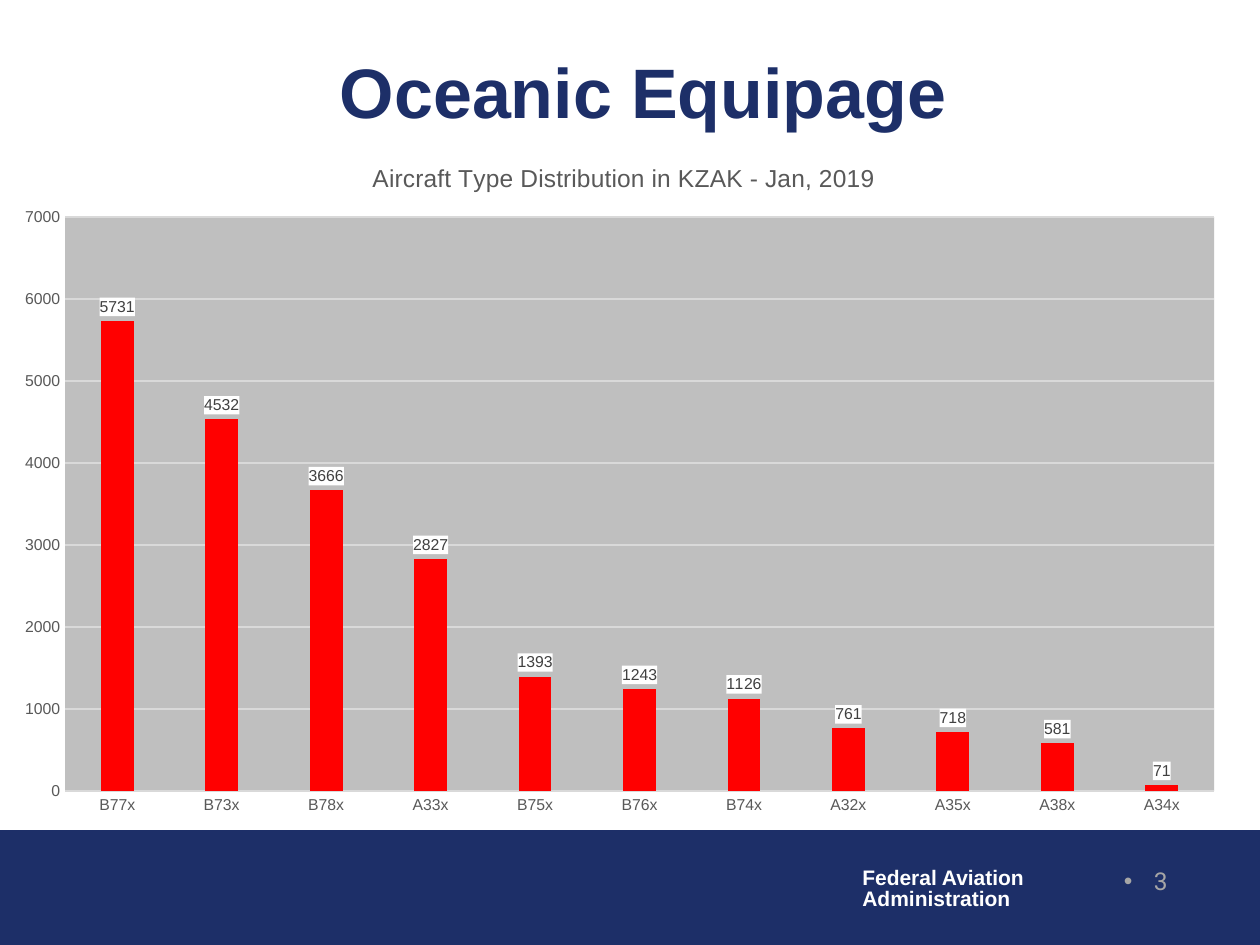
from dataclasses import dataclass

from pptx import Presentation
from pptx.chart.data import CategoryChartData
from pptx.dml.color import RGBColor
from pptx.enum import chart as ch, shapes, text
from pptx.oxml import parse_xml
from pptx.oxml.ns import nsdecls
from pptx.util import Emu, Pt


@dataclass(frozen=True)
class Theme:
    """Colours, fonts and type sizes."""
    navy: str = "1D2F68"
    white: str = "FFFFFF"
    red: str = "FF0000"
    plot: str = "BFBFBF"
    grid: str = "D9D9D9"
    grey: str = "595959"
    dark: str = "404040"
    pale: str = "A6A6A6"
    sans: str = "Arial"
    digit: str = "Roboto"
    head: int = 40
    sub: int = 14
    foot: int = 12
    tick: int = 9


T = Theme()
COUNTS = {
    "B77x": 5731, "B73x": 4532, "B78x": 3666, "A33x": 2827,
    "B75x": 1393, "B76x": 1243, "B74x": 1126, "A32x": 761,
    "A35x": 718, "A38x": 581, "A34x": 71,
}


def px(*nums):
    """Turn pixels into EMU lengths."""
    return [Emu(round(n * 914400 / 126)) for n in nums]


def rgb(hue):
    """Turn a hex string into a colour."""
    return RGBColor.from_string(hue)


def style(font, size, hue, bold=False, name=T.sans):
    """Set the look of a font."""
    font.name, font.size, font.bold = name, Pt(size), bold
    font.color.rgb = rgb(hue)


def write(para, words, *look, **more):
    """Add one styled run to a paragraph."""
    run = para.add_run()
    run.text = words
    style(run.font, *look, **more)


def rule(line, hue):
    """Draw a thin line in one colour."""
    line.color.rgb = rgb(hue)
    line.width = Pt(0.75)


def paint(hue):
    """Make a chart part's solid fill."""
    return parse_xml(
        f'<c:spPr {nsdecls("c", "a")}><a:solidFill><a:srgbClr val="{hue}"/>'
        '</a:solidFill><a:ln><a:noFill/></a:ln></c:spPr>')


def place(part, index, inner=False, **spots):
    """Pin a chart part at fractions of the chart."""
    for old in part.findall("{*}layout"):
        part.remove(old)
    modes = '<c:xMode val="edge"/><c:yMode val="edge"/>'
    target = '<c:layoutTarget val="inner"/>' if inner else ""
    vals = "".join(f'<c:{k} val="{v:.4f}"/>' for k, v in spots.items())
    part.insert(index, parse_xml(
        f'<c:layout {nsdecls("c")}><c:manualLayout>{target}{modes}{vals}'
        '</c:manualLayout></c:layout>'))


def add_title(slide, x, y, w, h):
    """Place and write the slide title."""
    box = slide.shapes.title
    box.left, box.top, box.width, box.height = px(x, y, w, h)
    frame = box.text_frame
    frame.vertical_anchor = text.MSO_ANCHOR.MIDDLE
    para = frame.paragraphs[0]
    para.alignment = text.PP_ALIGN.CENTER
    write(para, "Oceanic Equipage", T.head, T.navy, bold=True)


def add_bars(slide, x, y, w, h):
    """Add the column chart of aircraft types."""
    data = CategoryChartData()
    data.categories = list(COUNTS)
    data.add_series("Series 1", list(COUNTS.values()))
    chart = slide.shapes.add_chart(
        ch.XL_CHART_TYPE.COLUMN_CLUSTERED, *px(x, y, w, h), data).chart
    style(chart.font, 10, "000000")
    chart.has_legend = False
    title = chart.chart_title
    write(title.text_frame.paragraphs[0],
          "Aircraft Type Distribution in KZAK - Jan, 2019", T.sub, T.grey)
    place(title._element, 1, x=368 / w, y=27 / h)

    plot = chart.plots[0]
    plot.gap_width, plot.overlap, plot.vary_by_categories = 219, -27, False
    bars = plot.series[0]
    bars.format.fill.solid()
    bars.format.fill.fore_color.rgb = rgb(T.red)
    labels = bars.data_labels
    labels.show_value = True
    labels.position = ch.XL_LABEL_POSITION.OUTSIDE_END
    style(labels.font, T.tick, T.dark)
    labels._element.find("{*}txPr").addprevious(paint(T.white))

    cats, vals = chart.category_axis, chart.value_axis
    for axis in (cats, vals):
        axis.major_tick_mark = axis.minor_tick_mark = ch.XL_TICK_MARK.NONE
        style(axis.tick_labels.font, T.tick, T.grey)
    rule(cats.format.line, T.grid)
    vals.format.line.fill.background()
    vals.minimum_scale, vals.maximum_scale, vals.major_unit = 0, 7000, 1000
    rule(vals.major_gridlines.format.line, T.grid)

    area = chart._chartSpace.chart.plotArea
    place(area, 0, inner=True, x=65 / w, y=86 / h, w=1149 / w, h=574 / h)
    area.append(paint(T.plot))


def add_foot(slide, x, y, w, h):
    """Add the band with the agency name and page number."""
    band = slide.shapes.add_shape(
        shapes.MSO_SHAPE.RECTANGLE, *px(x, y, w, h))
    band.shadow.inherit = False
    band.fill.solid()
    band.fill.fore_color.rgb = rgb(T.navy)
    rule(band.line, T.navy)

    name = slide.shapes.add_textbox(*px(x + 850, y + 31, 189, 55)).text_frame
    name.word_wrap = False
    name.auto_size = text.MSO_AUTO_SIZE.SHAPE_TO_FIT_TEXT
    for i, words in enumerate(("Federal Aviation", "Administration")):
        para = name.add_paragraph() if i else name.paragraphs[0]
        para.line_spacing = 0.85
        write(para, words, T.foot, T.white, bold=True)

    page = slide.shapes.add_textbox(*px(x + 1031, y + 29, 149, 63)).text_frame
    page.word_wrap = True
    para = page.paragraphs[0]
    para.alignment = text.PP_ALIGN.RIGHT
    props = para._p.get_or_add_pPr()
    step = px(30)[0]
    props.set("marL", str(step))
    props.set("indent", str(-step))
    props.append(parse_xml(f'<a:buFont {nsdecls("a")} typeface="Arial"/>'))
    props.append(parse_xml(f'<a:buChar {nsdecls("a")} char="•"/>'))
    write(para, "3", T.sub, T.pale, name=T.digit)


def main():
    """Build and save the slide."""
    deck = Presentation()
    deck.slide_width, deck.slide_height = px(1260, 945)
    slide = deck.slides.add_slide(deck.slide_layouts[5])
    add_foot(slide, 0, 831, 1260, 113)
    add_title(slide, 59, 48, 1168, 84)
    add_bars(slide, 0, 131, 1239, 697)
    deck.save("out.pptx")


if __name__ == "__main__":
    main()
